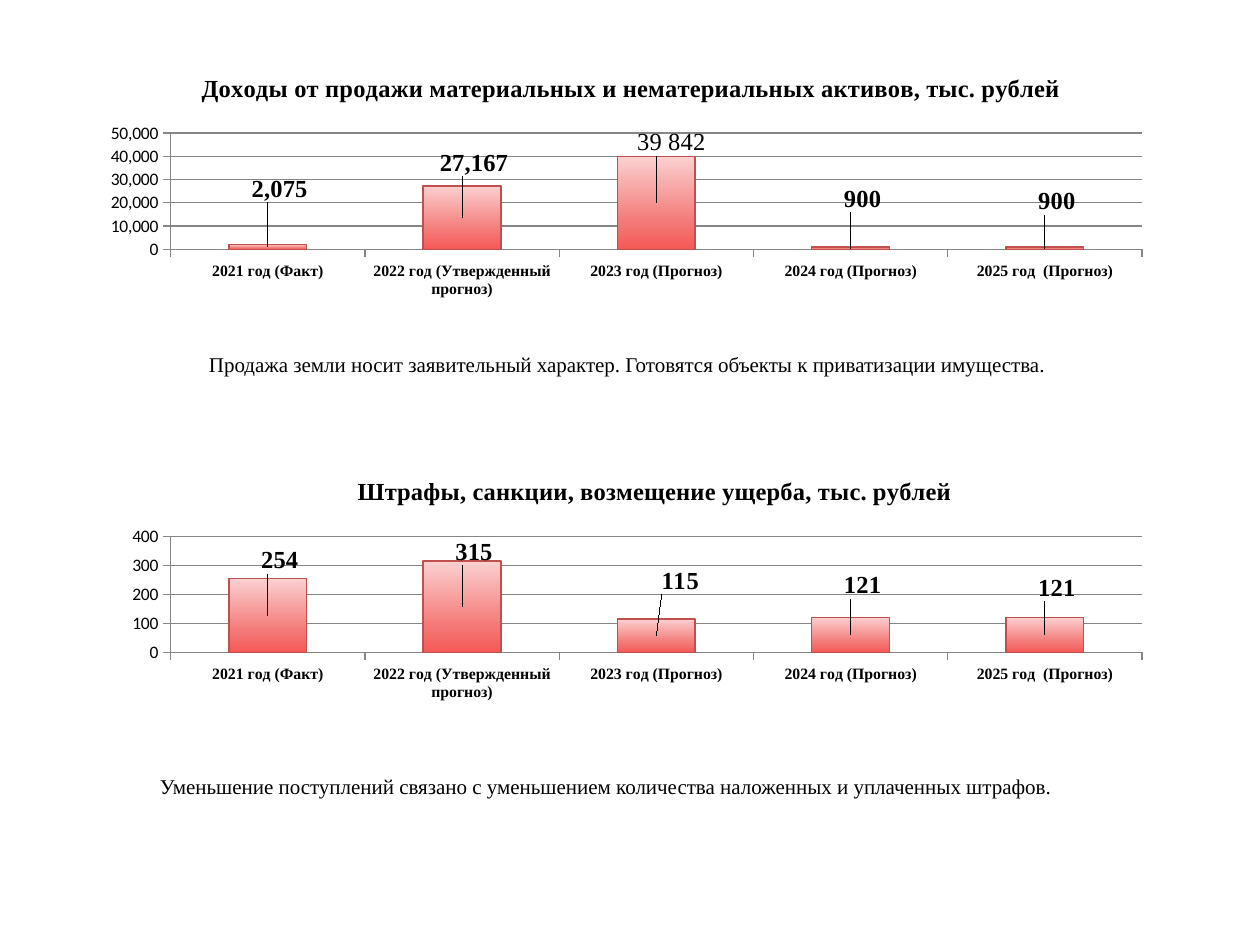
from copy import deepcopy

from pptx import Presentation
from pptx import util as u
from pptx.chart.data import CategoryChartData
from pptx.dml.color import RGBColor
from pptx.enum import chart as c
from pptx.enum import text
from pptx.oxml import parse_xml
from pptx.oxml.ns import nsdecls

BLACK = RGBColor(0x00, 0x00, 0x00)
GRID = RGBColor(0x86, 0x86, 0x86)
OUTLINE = RGBColor(0xC0, 0x50, 0x4D)
BAR_STOPS = [
    (0, RGBColor(0xFB, 0xD0, 0xD0)),
    (0.72, RGBColor(0xF3, 0x78, 0x76)),
    (1, RGBColor(0xF5, 0x59, 0x56)),
]
SERIF = "Times New Roman"
BASE = {"name": "Calibri", "size": u.Pt(18)}
HEADING = {"name": SERIF, "size": u.Pt(14), "bold": True}
PLAIN_LABEL = HEADING | {"bold": False}
CATEGORY = {"name": SERIF, "size": u.Pt(9), "bold": True}
SCALE = {"name": "Calibri", "size": u.Pt(10), "bold": False}
NOTE = {"name": SERIF, "size": u.Pt(12)}
NUMBER = "#,##0"
YEARS = [
    "2021 год (Факт)",
    "2022 год (Утвержденный прогноз)",
    "2023 год (Прогноз)",
    "2024 год (Прогноз)",
    "2025 год  (Прогноз)",
]
CHARTS = [
    {
        "title": "Доходы от продажи материальных и нематериальных активов, тыс. рублей",
        "title_left": 0.14,
        "top": u.Inches(0.47),
        "values": [2075, 27167, 39842, 900, 900],
        "scale": (50000, 10000),
        "offsets": [(0.01, -0.21), (0.01, -0.2), (0.01, -0.22), (0.01, -0.18), (0.01, -0.17)],
        "custom": {2: " 39 842"},
    },
    {
        "title": "Штрафы, санкции, возмещение ущерба, тыс. рублей",
        "title_left": 0.27,
        "top": u.Inches(3.67),
        "values": [254, 315, 115, 121, 121],
        "scale": (400, 100),
        "offsets": [(0.01, -0.2), (0.01, -0.2), (0.02, -0.2), (0.01, -0.18), (0.01, -0.17)],
        "custom": {},
    },
]


def style(font, values):
    """Apply a dict of format values to a font and make it black."""
    for name, value in values.items():
        setattr(font, name, value)
    font.color.rgb = BLACK


def set_layout(parent, index, **values):
    """Give a chart element a manual layout at the given child index."""
    for old in parent.xpath("./c:layout"):
        parent.remove(old)
    parts = "".join(f'<c:{name} val="{value}"/>' for name, value in values.items())
    parent.insert(index, parse_xml(
        f'<c:layout {nsdecls("c")}><c:manualLayout>{parts}</c:manualLayout></c:layout>'))


def paint_bars(series):
    """Fill the bars with the three-stop gradient and outline them."""
    fill = series.format.fill
    fill.gradient()
    fill.gradient_angle = 270
    stop_list = series._element.xpath("./c:spPr/a:gradFill/a:gsLst")[0]
    stop_list.append(deepcopy(stop_list[-1]))
    for stop, (position, color) in zip(fill.gradient_stops, BAR_STOPS):
        stop.position = position
        stop.color.rgb = color
    series.format.line.color.rgb = OUTLINE
    series.format.line.width = u.Pt(0.79)
    series.invert_if_negative = False


def label_bars(series, offsets, custom):
    """Show each value, shifted from the middle of its bar."""
    labels = series.data_labels
    labels.show_value = True
    labels.number_format = NUMBER
    labels.number_format_is_linked = False
    style(labels.font, HEADING)
    for index, (x, y) in enumerate(offsets):
        label = series.points[index].data_label
        if index in custom:
            para = label.text_frame.paragraphs[0]
            span = para.add_run()
            span.text = custom[index]
            style(span.font, PLAIN_LABEL)
        else:
            style(label.font, HEADING)
        element = series._element.xpath(f"./c:dLbls/c:dLbl[c:idx/@val={index}]")[0]
        set_layout(element, 1, x=x, y=y)


def format_axes(chart, scale):
    """Set the scale, grid lines and fonts of both axes."""
    value_axis, category_axis = chart.value_axis, chart.category_axis
    value_axis.minimum_scale = 0
    value_axis.maximum_scale, value_axis.major_unit = scale
    value_axis.has_major_gridlines = True
    value_axis.major_gridlines.format.line.color.rgb = GRID
    value_axis.tick_labels.number_format = NUMBER
    value_axis.tick_labels.number_format_is_linked = False
    for axis, font in ((value_axis, SCALE), (category_axis, CATEGORY)):
        axis.major_tick_mark = c.XL_TICK_MARK.OUTSIDE
        axis.format.line.color.rgb = GRID
        style(axis.tick_labels.font, font)


def add_column_chart(page, box, content):
    """Place one titled column chart in the box."""
    data = CategoryChartData(number_format=NUMBER)
    data.categories = YEARS
    data.add_series("Series 1", content["values"])
    chart = page.shapes.add_chart(c.XL_CHART_TYPE.COLUMN_STACKED, *box, data).chart
    style(chart.font, BASE)
    chart.has_legend = False
    chart.has_title = True
    title = chart.chart_title
    title.text_frame.text = content["title"]
    style(title.text_frame.paragraphs[0].runs[0].font, HEADING)
    set_layout(title._element, 1, xMode="edge", yMode="edge",
               x=content["title_left"], y=0.03)
    plot_area = chart._chartSpace.xpath("./c:chart/c:plotArea")[0]
    set_layout(plot_area, 0, layoutTarget="inner", xMode="edge", yMode="edge",
               x=0.118, y=0.268, w=0.809, h=0.421)
    plot = chart.plots[0]
    plot.gap_width = 150
    plot.overlap = 100
    plot.vary_by_categories = False
    series = plot.series[0]
    paint_bars(series)
    label_bars(series, content["offsets"], content["custom"])
    format_axes(chart, content["scale"])


def add_note(page, box, spans):
    """Place a one-line note made of formatted spans."""
    frame = page.shapes.add_textbox(*box).text_frame
    frame.word_wrap = False
    frame.auto_size = text.MSO_AUTO_SIZE.SHAPE_TO_FIT_TEXT
    para = frame.paragraphs[0]
    for words, font in spans:
        span = para.add_run()
        span.text = words
        style(span.font, font)


def main():
    """Build the slide and save it."""
    deck = Presentation()
    deck.slide_width, deck.slide_height = u.Inches(10), u.Inches(7.5)
    page = deck.slides.add_slide(deck.slide_layouts[6])
    for content in CHARTS:
        box = (u.Inches(0.23), content["top"], u.Inches(9.53), u.Inches(2.19))
        add_column_chart(page, box, content)
    add_note(page, (u.Inches(1.56), u.Inches(2.66), u.Inches(6.95), u.Inches(0.4)), [
        ("Продажа земли носит заявительный характер. "
         "Готовятся объекты к приватизации имущества.", NOTE),
        (" ", BASE),
    ])
    add_note(page, (u.Inches(1.17), u.Inches(6.09), u.Inches(7.32), u.Inches(0.3)), [
        ("Уменьшение поступлений связано с уменьшением количества "
         "наложенных и уплаченных штрафов.", NOTE),
    ])
    deck.save("out.pptx")


if __name__ == "__main__":
    main()
